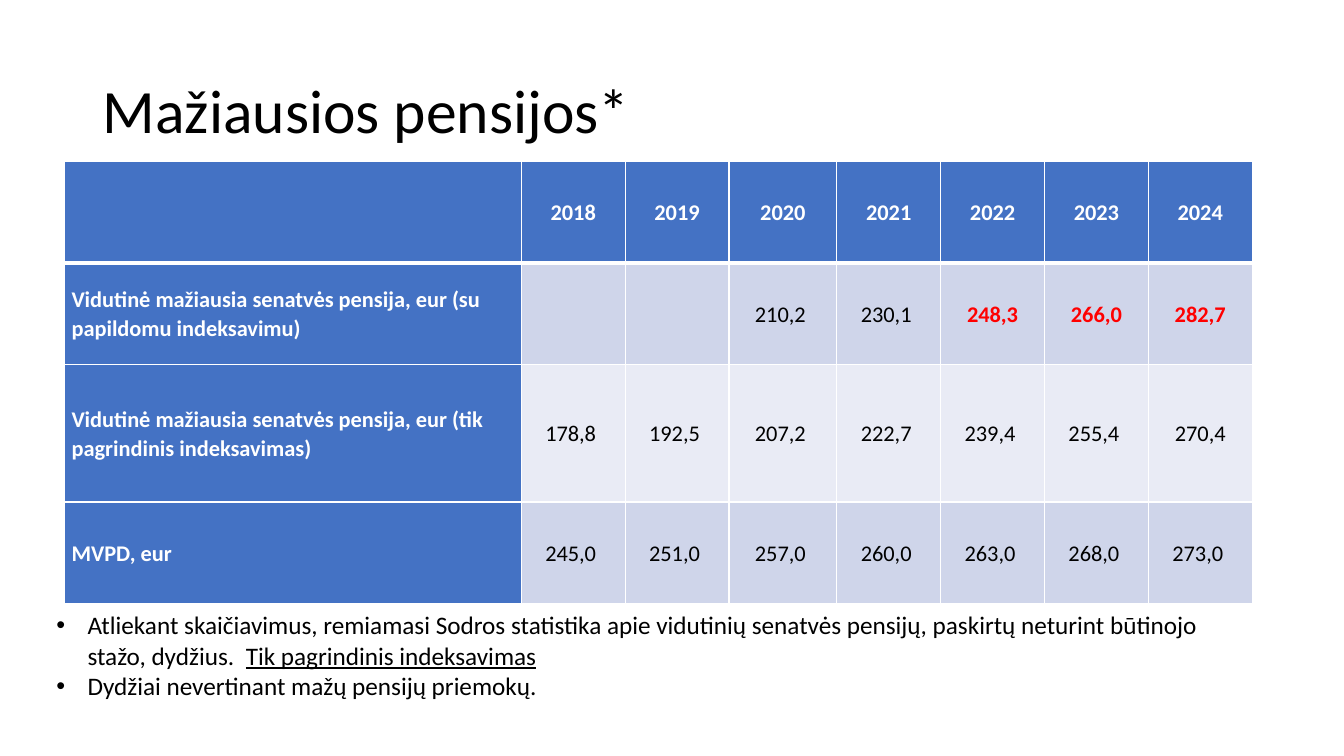
from lxml.etree import SubElement
from pptx import Presentation
from pptx.dml.color import RGBColor
from pptx.enum.text import MSO_ANCHOR, PP_ALIGN
from pptx.oxml.ns import qn
from pptx.util import Inches, Pt

BLACK = RGBColor(0x00, 0x00, 0x00)
WHITE = RGBColor(0xFF, 0xFF, 0xFF)
RED = RGBColor(0xFF, 0x00, 0x00)
BLUE = RGBColor(0x44, 0x72, 0xC4)
BAND_DARK = RGBColor(0xCF, 0xD5, 0xEA)
BAND_LIGHT = RGBColor(0xE9, 0xEB, 0xF5)

COLUMN_WIDTHS = [4.53, 1.03, 1.03, 1.07, 1.03, 1.03, 1.03, 1.03]
ROW_HEIGHTS = [1.01, 1.01, 1.36, 1.01]
PENSIONS = [
    ["", "2018", "2019", "2020", "2021", "2022", "2023", "2024"],
    ["Vidutinė mažiausia senatvės pensija, eur (su papildomu indeksavimu)",
     "", "", "210,2 ", "230,1 ", "248,3", "266,0", "282,7"],
    ["Vidutinė mažiausia senatvės pensija, eur (tik pagrindinis indeksavimas)",
     "178,8 ", "192,5 ", "207,2 ", "222,7 ", "239,4 ", "255,4 ", "270,4"],
    ["MVPD, eur",
     "245,0 ", "251,0 ", "257,0 ", "260,0 ", "263,0 ", "268,0 ", "273,0 "],
]
HIGHLIGHTS = {(1, 5), (1, 6), (1, 7)}
NOTES = [
    [("Atliekant skaičiavimus, remiamasi Sodros statistika apie vidutinių senatvės "
      "pensijų, paskirtų neturint būtinojo stažo, dydžius.  ", False),
     ("Tik pagrindinis indeksavimas", True)],
    [("Dydžiai nevertinant mažų pensijų priemokų.", False)],
]


def add_span(para, text, size=18, color=BLACK, bold=False, underline=False, font="Calibri"):
    span = para.add_run()
    span.text = text
    span.font.name = font
    span.font.size = Pt(size)
    span.font.color.rgb = color
    span.font.bold = bold
    span.font.underline = underline


class SlideBuilder:
    def __init__(self, page):
        self.page = page
        self.border_color = WHITE

    def text_box(self, left, top, width, height, anchor=MSO_ANCHOR.TOP):
        box = self.page.shapes.add_textbox(
            Inches(left), Inches(top), Inches(width), Inches(height))
        frame = box.text_frame
        frame.word_wrap = True
        frame.vertical_anchor = anchor
        return frame

    def title(self, text):
        frame = self.text_box(0.92, 0.4, 11.5, 1.45, MSO_ANCHOR.MIDDLE)
        para = frame.paragraphs[0]
        para.line_spacing = 0.9
        add_span(para, text, size=44)

    def bullets(self, notes):
        frame = self.text_box(0.46, 6, 11.78, 1.01)
        for index, note in enumerate(notes):
            para = frame.add_paragraph() if index else frame.paragraphs[0]
            properties = para._p.get_or_add_pPr()
            properties.set("marL", str(Inches(0.31)))
            properties.set("indent", str(Inches(-0.31)))
            SubElement(properties, qn("a:buFont"), typeface="Arial")
            SubElement(properties, qn("a:buChar"), char="•")
            for text, underline in note:
                add_span(para, text, underline=underline)

    def borders(self, cell, **widths):
        properties = cell._tc.get_or_add_tcPr()
        for side in "LRTB":
            line = SubElement(properties, qn(f"a:ln{side}"), w=str(Pt(widths.get(side, 1))))
            fill = SubElement(line, qn("a:solidFill"))
            SubElement(fill, qn("a:srgbClr"), val=str(self.border_color))

    def cell(self, cell, text, fill, color, bold, align):
        cell.fill.solid()
        cell.fill.fore_color.rgb = fill
        cell.vertical_anchor = MSO_ANCHOR.MIDDLE
        cell.margin_left = cell.margin_right = Inches(0.07)
        cell.margin_top = cell.margin_bottom = 0
        if text:
            para = cell.text_frame.paragraphs[0]
            para.alignment = align
            para.line_spacing = 1.06
            para.space_after = Pt(8)
            add_span(para, text, size=16, color=color, bold=bold)

    def table(self, left, top, values):
        table = self.page.shapes.add_table(
            len(ROW_HEIGHTS), len(COLUMN_WIDTHS), Inches(left), Inches(top),
            Inches(sum(COLUMN_WIDTHS)), Inches(sum(ROW_HEIGHTS))).table
        table.first_col = True
        for column, width in zip(table.columns, COLUMN_WIDTHS):
            column.width = Inches(width)
        for row, height in zip(table.rows, ROW_HEIGHTS):
            row.height = Inches(height)
        for row, texts in enumerate(values):
            for column, text in enumerate(texts):
                heading = row == 0 or column == 0
                highlighted = (row, column) in HIGHLIGHTS
                band = BAND_DARK if row % 2 else BAND_LIGHT
                cell = table.cell(row, column)
                self.borders(cell, T=3 if row == 1 else 1, B=3 if row == 0 else 1)
                self.cell(
                    cell, text,
                    fill=BLUE if heading else band,
                    color=WHITE if heading else RED if highlighted else BLACK,
                    bold=heading or highlighted,
                    align=PP_ALIGN.CENTER if column else PP_ALIGN.LEFT)


def main():
    deck = Presentation()
    deck.slide_width = Inches(13.33)
    deck.slide_height = Inches(7.5)
    builder = SlideBuilder(deck.slides.add_slide(deck.slide_layouts[6]))
    builder.title("Mažiausios pensijos*")
    builder.table(0.64, 1.6, PENSIONS)
    builder.bullets(NOTES)
    deck.save("out.pptx")


if __name__ == "__main__":
    main()
